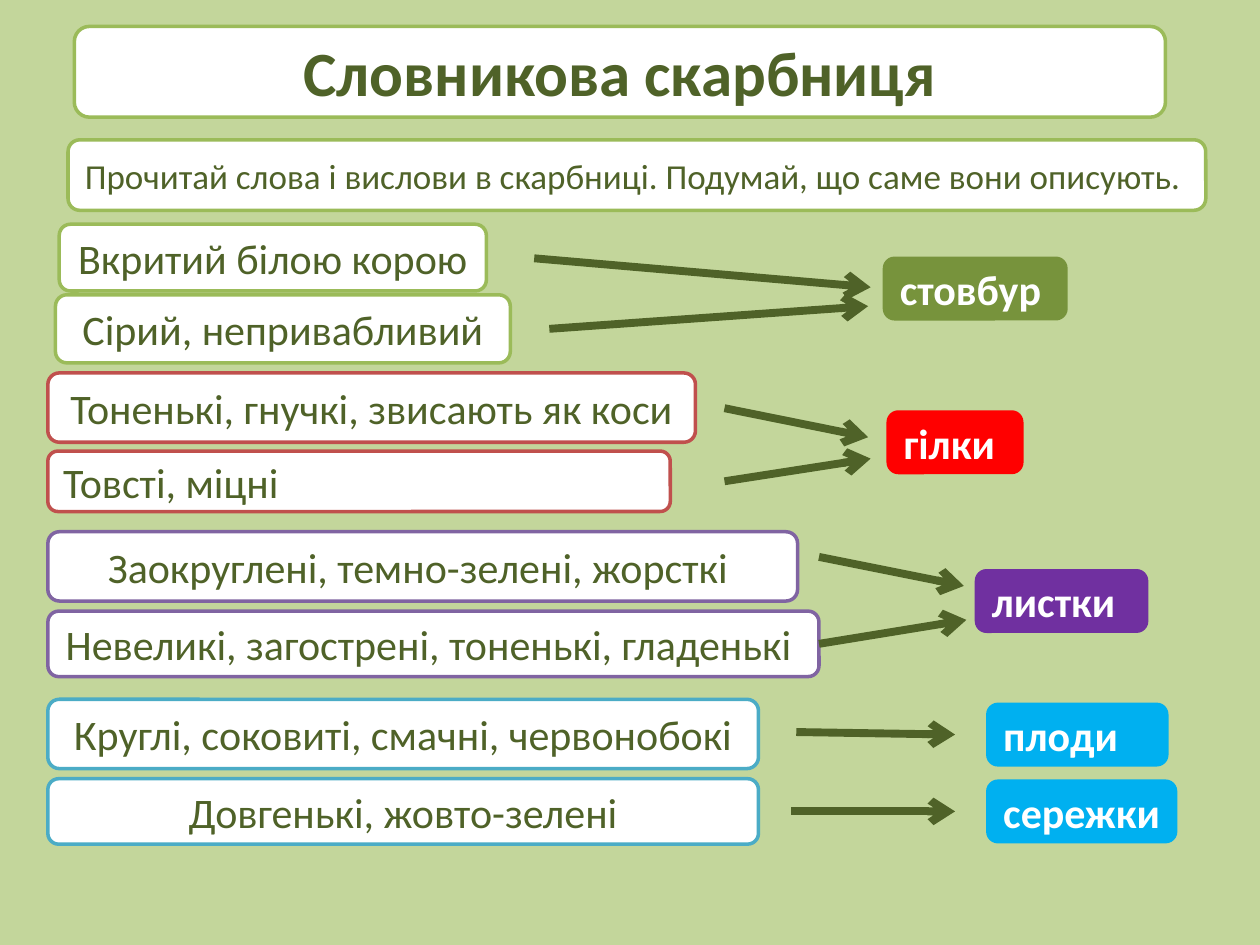
from dataclasses import dataclass

from lxml import etree
from pptx import Presentation
from pptx.dml.color import RGBColor
from pptx.enum.shapes import MSO_CONNECTOR, MSO_SHAPE
from pptx.enum.text import MSO_ANCHOR, PP_ALIGN
from pptx.oxml.ns import qn
from pptx.util import Inches, Pt

ROUNDED = MSO_SHAPE.ROUNDED_RECTANGLE
STRAIGHT = MSO_CONNECTOR.STRAIGHT
MIDDLE = MSO_ANCHOR.MIDDLE
LEFT, CENTER = PP_ALIGN.LEFT, PP_ALIGN.CENTER

COLS, ROWS = 100, 75
WIDTH, HEIGHT = Inches(10), Inches(7.5)
DARK, WHITE, PALE = "4F6228", "FFFFFF", "C3D69B"
GREEN, RED, PURPLE, BLUE = "9BBB59", "C0504D", "8064A2", "4BACC6"
EDGE = 3.8
LABEL_ROWS = 4.8


@dataclass
class Box:
    """A rounded box in grid columns and rows."""
    text: str
    col: float
    row: float
    cols: float
    rows: float
    line: str
    size: int = 24
    align: int = CENTER
    fill: str = WHITE
    color: str = DARK
    bold: bool = False


@dataclass
class Arrow:
    """An arrow between two grid points."""
    col: float
    row: float
    to_col: float
    to_row: float


def label(text: str, col: float, row: float, cols: float, color: str) -> Box:
    """Return a bold answer label filled with one colour."""
    return Box(text, col, row, cols, LABEL_ROWS, color, align=LEFT,
               fill=color, color=WHITE, bold=True)


BOXES = [
    Box("Словникова скарбниця", 5.9, 2.1, 86.6, 7.2, GREEN, 36, bold=True),
    Box("Прочитай слова і вислови в скарбниці. Подумай, що саме вони описують. ",
        5.4, 11.1, 90.3, 5.6, GREEN, 20),
    Box("Товсті, міцні", EDGE, 35.8, 49.4, 4.8, RED, align=LEFT),
    Box("Тоненькі, гнучкі, звисають як коси", EDGE, 29.6, 51.4, 5.5, RED),
    Box("Невеликі, загострені, тоненькі, гладенькі ", EDGE, 48.5, 61.2, 5.2, PURPLE),
    Box("Заокруглені, темно-зелені, жорсткі ", EDGE, 42.2, 59.5, 5.5, PURPLE),
    Box("Вкритий білою корою", 4.7, 17.8, 33.9, 5.3, GREEN),
    Box("Сірий, непривабливий", 4.4, 23.4, 36.1, 5.4, GREEN),
    Box("Довгенькі, жовто-зелені", EDGE, 61.8, 56.4, 5.2, BLUE),
    Box("Круглі, соковиті, смачні, червонобокі", EDGE, 55.5, 56.4, 5.5, BLUE),
    label("стовбур", 70.2, 20.5, 14.4, "77933C"),
    label("гілки", 70.5, 32.7, 10.6, "FF0000"),
    label("листки", 77.5, 45.3, 13.5, "7030A0"),
    label("плоди", 78.4, 55.9, 14.2, "00B0F0"),
    label("сережки", 78.4, 62, 14.9, "00B0F0"),
]

ARROWS = [
    Arrow(42.4, 20.5, 69.1, 22.8),
    Arrow(43.6, 26.1, 68.9, 24.3),
    Arrow(57.5, 32.4, 68.9, 34.7),
    Arrow(57.5, 38.2, 69.1, 36.4),
    Arrow(65, 44.2, 76.5, 46.5),
    Arrow(65, 51.1, 76.7, 49.2),
    Arrow(63.2, 58.1, 75.8, 58.3),
    Arrow(62.8, 64.4, 75.8, 64.4),
]


def x(col: float) -> int:
    """Convert grid columns to a length."""
    return round(WIDTH * col / COLS)


def y(row: float) -> int:
    """Convert grid rows to a length."""
    return round(HEIGHT * row / ROWS)


def paint(fill, color: str) -> None:
    """Give a fill one solid colour."""
    fill.solid()
    fill.fore_color.rgb = RGBColor.from_string(color)


def draw_box(s, box: Box) -> None:
    """Draw a rounded box with its text."""
    sp = s.shapes.add_shape(ROUNDED, x(box.col), y(box.row), x(box.cols), y(box.rows))
    sp.shadow.inherit = False
    paint(sp.fill, box.fill)
    paint(sp.line.fill, box.line)
    sp.line.width = Pt(2)
    tf = sp.text_frame
    frame = {"word_wrap": True, "vertical_anchor": MIDDLE}
    if box.align == LEFT:
        frame["margin_right"] = 0
    for name, value in frame.items():
        setattr(tf, name, value)
    p = tf.paragraphs[0]
    p.alignment = box.align
    r = p.add_run()
    r.text = box.text
    font = {"name": "Calibri", "size": Pt(box.size), "bold": box.bold}
    for name, value in font.items():
        setattr(r.font, name, value)
    paint(r.font.fill, box.color)


def draw_arrow(s, arrow: Arrow) -> None:
    """Draw a thick connector with an open arrowhead."""
    sp = s.shapes.add_connector(STRAIGHT, x(arrow.col), y(arrow.row),
                                x(arrow.to_col), y(arrow.to_row))
    paint(sp.line.fill, DARK)
    sp.line.width = Pt(4.5)
    etree.SubElement(sp.line._get_or_add_ln(), qn("a:tailEnd"), type="arrow")
    etree.SubElement(sp._element.spPr, qn("a:effectLst"))


def main() -> None:
    """Build and save the slide."""
    prs = Presentation()
    prs.slide_width, prs.slide_height = WIDTH, HEIGHT
    s = prs.slides.add_slide(prs.slide_layouts[6])
    paint(s.background.fill, PALE)
    for box in BOXES:
        draw_box(s, box)
    for arrow in ARROWS:
        draw_arrow(s, arrow)
    prs.save("out.pptx")


if __name__ == "__main__":
    main()
